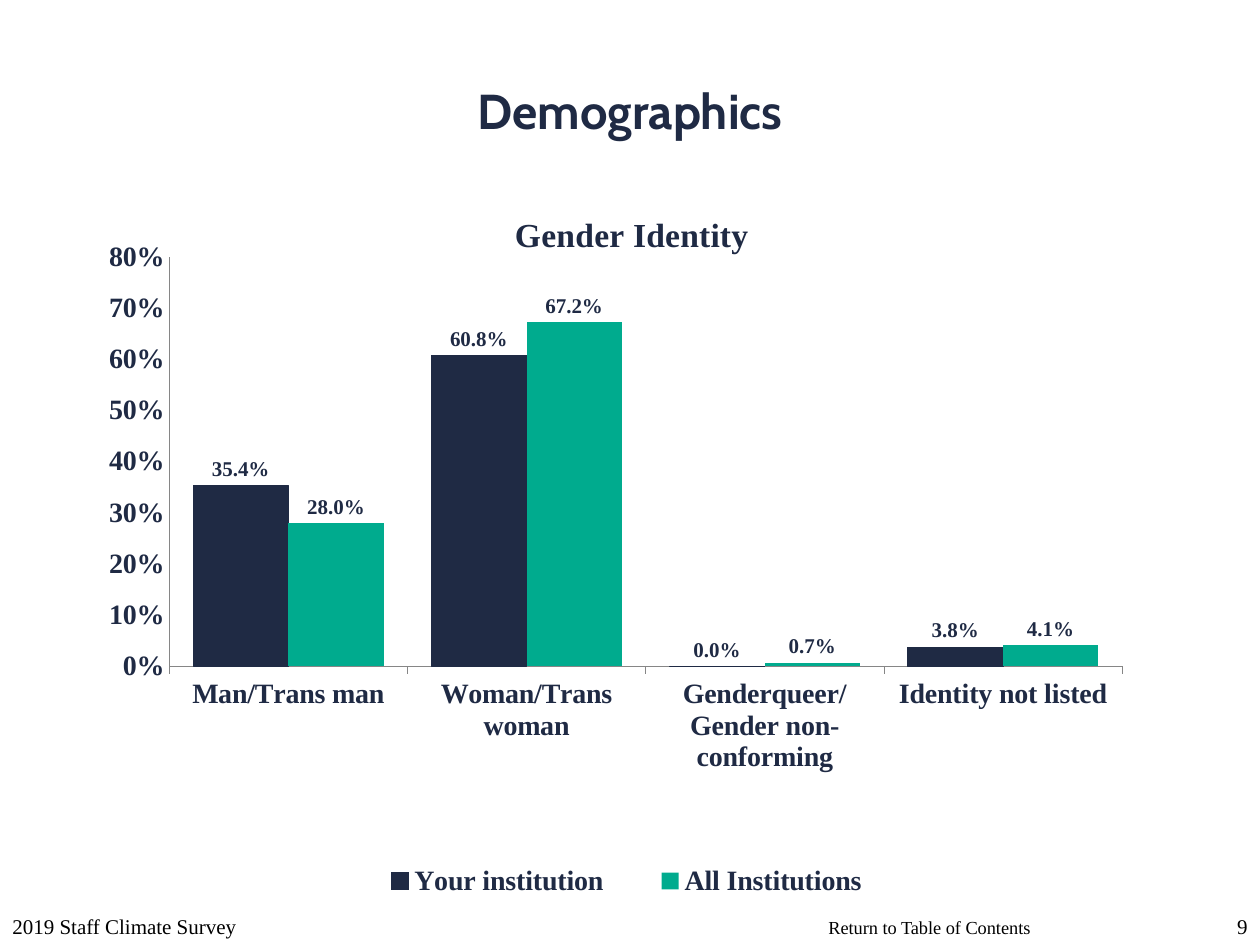
"""Build the gender identity slide of the staff climate survey."""
from lxml.etree import SubElement
from pptx import Presentation
from pptx.chart.data import CategoryChartData
from pptx.dml.color import RGBColor
from pptx.enum.chart import XL_CHART_TYPE as ChartType
from pptx.enum.chart import XL_LABEL_POSITION as LabelPos
from pptx.enum.chart import XL_LEGEND_POSITION as LegendPos
from pptx.enum.chart import XL_TICK_MARK as Tick
from pptx.enum.text import MSO_ANCHOR as Anchor
from pptx.enum.text import PP_ALIGN as Align
from pptx.oxml.ns import qn
from pptx.util import Pt

PX = 914400 / 126
COLORS = {"navy": "1F2A44", "green": "00AB8E", "black": "000000", "axis": "868686"}
SERIF = "Times New Roman"


def px(*lengths):
    return [round(length * PX) for length in lengths]


def write(frame, text, size=12, font=SERIF, color="black", bold=False,
          align=Align.LEFT, anchor=Anchor.BOTTOM, wrap=True):
    frame.word_wrap = wrap
    frame.vertical_anchor = anchor
    paragraph = frame.paragraphs[0]
    paragraph.alignment = align
    run = paragraph.add_run()
    run.text = text
    run.font.size, run.font.name, run.font.bold = Pt(size), font, bold
    run.font.color.rgb = RGBColor.from_string(COLORS[color])


deck = Presentation()
deck.slide_width, deck.slide_height = px(1260, 945)
slide = deck.slides.add_slide(deck.slide_layouts[5])

heading = slide.shapes.title
heading.left, heading.top, heading.width, heading.height = px(0, 31, 1260, 158)
write(heading.text_frame, "Demographics", size=28, font="Cabin", color="navy",
      bold=True, align=Align.CENTER, anchor=Anchor.MIDDLE)

responses = CategoryChartData(number_format="0.0%")
responses.categories = ["Man/Trans man", "Woman/Trans woman",
                        "Genderqueer/ Gender non-conforming", "Identity not listed"]
responses.add_series("Your institution", (0.354, 0.608, 0, 0.038))
responses.add_series("All Institutions", (0.28, 0.672, 0.007, 0.041))
chart = slide.shapes.add_chart(
    ChartType.COLUMN_CLUSTERED, *px(63, 197, 1155, 707), responses).chart

chart.font.size, chart.font.name, chart.font.bold = Pt(16), SERIF, True
chart.font.color.rgb = RGBColor.from_string(COLORS["navy"])
chart.has_title = True
write(chart.chart_title.text_frame, "Gender Identity", size=19.2, color="navy",
      bold=True, align=Align.CENTER, anchor=Anchor.MIDDLE)
chart.chart_title.include_in_layout = False
chart.has_legend = True
chart.legend.position = LegendPos.BOTTOM
chart.legend.include_in_layout = False

plot = chart.plots[0]
plot.gap_width, plot.overlap, plot.vary_by_categories = 50, 0, False
for series, color in zip(plot.series, ("navy", "green")):
    series.invert_if_negative = False
    series.format.fill.solid()
    series.format.fill.fore_color.rgb = RGBColor.from_string(COLORS[color])
    labels = series.data_labels
    labels.show_value = True
    labels.position = LabelPos.OUTSIDE_END
    labels.number_format, labels.number_format_is_linked = "0.0%", False
    labels.font.size, labels.font.name, labels.font.bold = Pt(12), SERIF, True
    labels.font.color.rgb = RGBColor.from_string(COLORS["navy"])
own_line = plot.series[0].format.line
own_line.color.rgb = RGBColor.from_string(COLORS["navy"])
own_line.width = Pt(0.25)

shares, identities = chart.value_axis, chart.category_axis
shares.minimum_scale, shares.maximum_scale, shares.major_unit = 0, 0.8, 0.1
shares.has_major_gridlines = False
shares.tick_labels.number_format = "0%"
shares.tick_labels.number_format_is_linked = False
for axis, tick in ((shares, Tick.NONE), (identities, Tick.OUTSIDE)):
    axis.major_tick_mark, axis.minor_tick_mark = tick, Tick.NONE
    axis.format.line.color.rgb = RGBColor.from_string(COLORS["axis"])
    axis.format.line.width = Pt(0.25)
    axis.tick_labels.font.size = Pt(16)
    axis.tick_labels.font.bold = True
    axis.tick_labels.font.name = SERIF
    axis.tick_labels.font.color.rgb = RGBColor.from_string(COLORS["navy"])
upright = identities._element.find(qn("c:txPr")).find(qn("a:bodyPr"))
upright.set("rot", "0")
upright.set("vert", "horz")

edges = {"xMode": "edge", "yMode": "edge"}
for part, previous, placement in (
    ("plotArea", None, {"layoutTarget": "inner", **edges,
                        "x": 0.092, "y": 0.085, "w": 0.825, "h": 0.579}),
    ("title", "tx", {**edges, "x": 0.386, "y": 0.014}),
    ("legend", "legendPos", {**edges, "x": 0.242, "y": 0.935, "w": 0.492, "h": 0.065}),
):
    owner = chart.element.find(qn("c:chart")).find(qn(f"c:{part}"))
    for automatic in owner.findall(qn("c:layout")):
        owner.remove(automatic)
    layout = SubElement(owner, qn("c:layout"))
    if previous:
        owner.find(qn(f"c:{previous}")).addnext(layout)
    else:
        owner.insert(0, layout)
    manual = SubElement(layout, qn("c:manualLayout"))
    for tag, value in placement.items():
        SubElement(manual, qn(f"c:{tag}")).set("val", str(value))

for text, place, style in (
    ("Return to Table of Contents", (816, 910, 229, 35),
     {"size": 10.5, "anchor": Anchor.TOP, "wrap": False}),
    ("2019 Staff Climate Survey", (0, 882, 399, 63), {}),
    ("9", (1197, 882, 63, 63), {"align": Align.RIGHT}),
):
    write(slide.shapes.add_textbox(*px(*place)).text_frame, text, **style)

deck.save("out.pptx")
